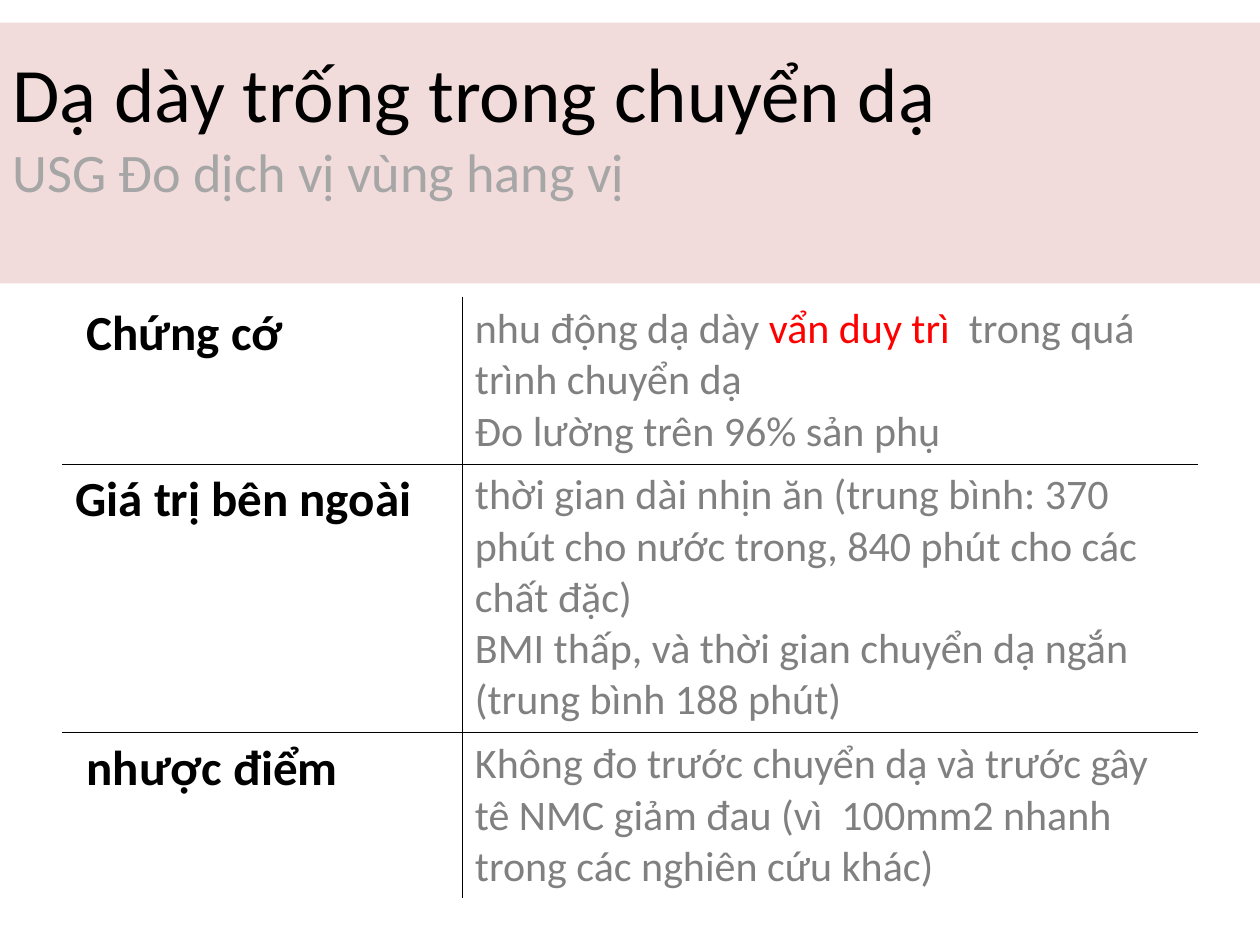
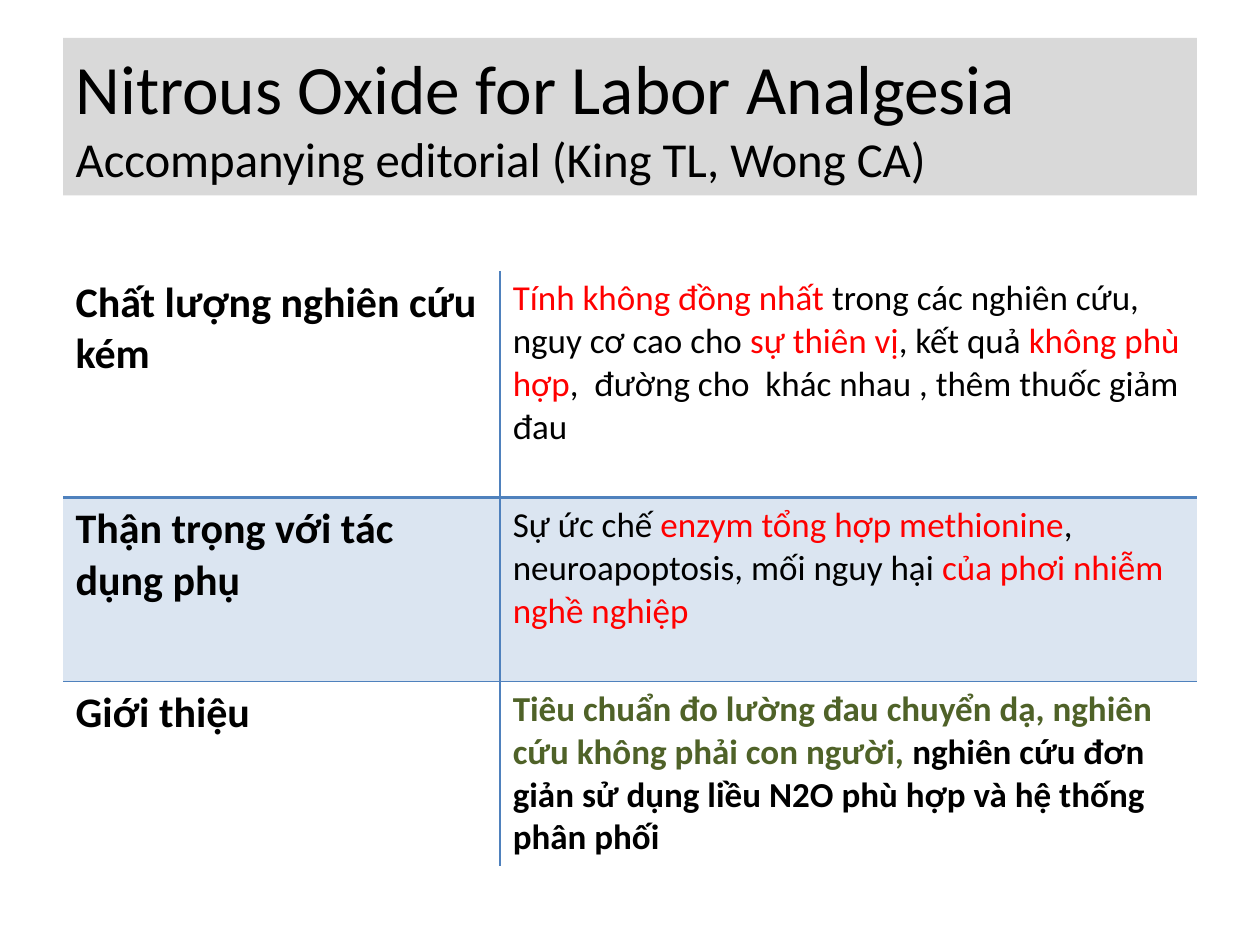
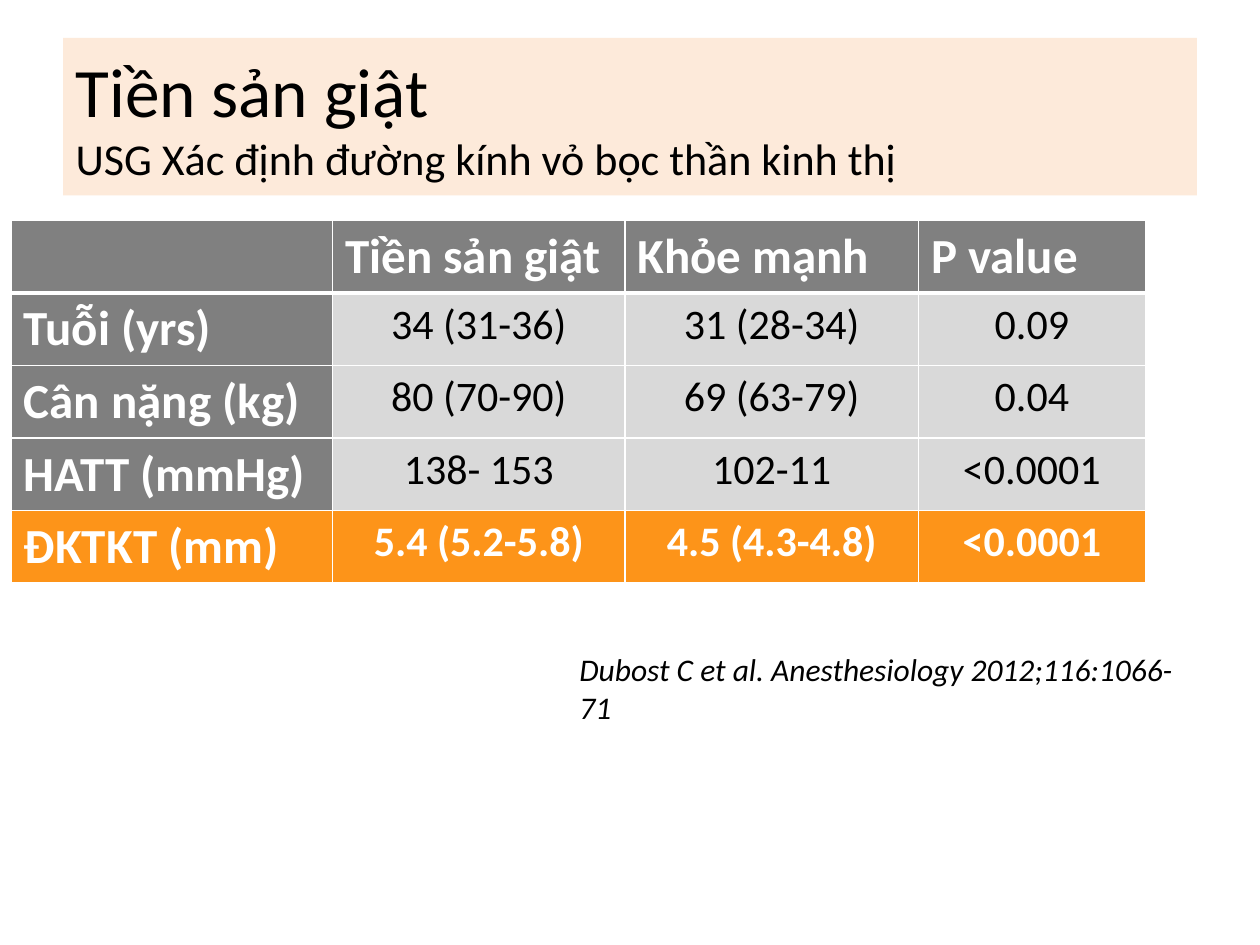
from lxml import etree
from pptx import Presentation
from pptx.dml.color import RGBColor
from pptx.enum.text import MSO_ANCHOR, MSO_AUTO_SIZE, PP_ALIGN
from pptx.oxml.ns import qn
from pptx.util import Inches, Pt

FONT = "Calibri"
COLORS = {
    "black": "000000", "white": "FFFFFF", "red": "FF0000", "green": "4F6228",
    "gray": "808080", "label_gray": "7F7F7F", "light_gray": "D9D9D9",
    "subtitle_gray": "A6A6A6", "rose": "F2DCDB", "peach": "FDEADA",
    "blue": "4F81BD", "orange": "FD9419",
}
TITLE_BOX = (0.5, 0.3, 9, 1.25)


def rgb(name):
    return RGBColor.from_string(COLORS[name])


def add_run(paragraph, text, size, color="black", bold=False, italic=False):
    run = paragraph.add_run()
    run.text = text
    font = run.font
    font.name, font.size, font.bold, font.italic = FONT, Pt(size), bold, italic
    font.color.rgb = rgb(color)


def title_slide(prs, band, heading, subtitle, box=TITLE_BOX, bottom_inset=0.05):
    """Add a slide whose title is a coloured band with two lines.

    heading and subtitle are (text, size, color).
    """
    slide = prs.slides.add_slide(prs.slide_layouts[5])
    title = slide.shapes.title
    title.left, title.top, title.width, title.height = map(Inches, box)
    title.fill.solid()
    title.fill.fore_color.rgb = rgb(band)
    frame = title.text_frame
    frame.auto_size = MSO_AUTO_SIZE.NONE
    frame.vertical_anchor = MSO_ANCHOR.MIDDLE
    frame.margin_bottom = Inches(bottom_inset)
    paragraph = frame.paragraphs[0]
    paragraph.alignment = PP_ALIGN.LEFT
    add_run(paragraph, *heading)
    paragraph.add_line_break()
    add_run(paragraph, *subtitle)
    return slide


def set_border(cell, side, line):
    """Draw one side of a cell; line is (color, points) or None."""
    border = etree.SubElement(cell._tc.get_or_add_tcPr(), qn(f"a:ln{side}"))
    if line is None:
        etree.SubElement(border, qn("a:noFill"))
        return
    color, width = line
    border.set("w", str(Pt(width)))
    fill = etree.SubElement(border, qn("a:solidFill"))
    etree.SubElement(fill, qn("a:srgbClr"), val=COLORS[color])


def fill_cell(cell, color, opacity=100):
    if color is None:
        cell.fill.background()
        return
    cell.fill.solid()
    cell.fill.fore_color.rgb = rgb(color)
    if opacity < 100:
        tint = cell._tc.tcPr.find(f"{qn('a:solidFill')}/{qn('a:srgbClr')}")
        etree.SubElement(tint, qn("a:alpha"), val=str(opacity * 1000))


def add_grid(slide, left, top, columns, heights, across, down):
    """Add a plain table; across and down list its rules from edge to edge."""
    frame = slide.shapes.add_table(
        len(heights), len(columns), Inches(left), Inches(top),
        Inches(sum(columns)), Inches(sum(heights)))
    table = frame.table
    table.first_row = table.horz_banding = False
    for column, width in zip(table.columns, columns):
        column.width = Inches(width)
    for r, height in enumerate(heights):
        table.rows[r].height = Inches(height)
        for c in range(len(columns)):
            sides = (("L", down[c]), ("R", down[c + 1]),
                     ("T", across[r]), ("B", across[r + 1]))
            for side, line in sides:
                set_border(table.cell(r, c), side, line)
    return table


def fill_argument_table(table, rows, label_size, text_size, fills):
    """Bold label on the left, paragraphs of (text, color[, bold]) on the right."""
    for r, (label, paragraphs) in enumerate(rows):
        label_cell, text_cell = table.cell(r, 0), table.cell(r, 1)
        for cell in (label_cell, text_cell):
            fill_cell(cell, *fills[r])
        add_run(label_cell.text_frame.paragraphs[0], label, label_size, bold=True)
        frame = text_cell.text_frame
        for i, runs in enumerate(paragraphs):
            paragraph = frame.add_paragraph() if i else frame.paragraphs[0]
            for text, *style in runs:
                add_run(paragraph, text, text_size, *style)


def fill_value_table(table, rows):
    """Header row, label column, centred values and a highlighted last row."""
    last = len(rows) - 1
    for r, row in enumerate(rows):
        for c, text in enumerate(row):
            cell = table.cell(r, c)
            heading = r == 0 or c == 0
            strong = heading or r == last
            if r == last:
                fill = "orange"
            elif r == 0:
                fill = "gray"
            else:
                fill = "label_gray" if c == 0 else "light_gray"
            fill_cell(cell, fill)
            if text:
                paragraph = cell.text_frame.paragraphs[0]
                paragraph.alignment = PP_ALIGN.LEFT if heading else PP_ALIGN.CENTER
                add_run(paragraph, text, 28 if heading else 24,
                        "white" if strong else "black", strong)


def add_citation(slide, box, text):
    citation = slide.shapes.add_textbox(*map(Inches, box))
    citation.text_frame.word_wrap = True
    add_run(citation.text_frame.paragraphs[0], text, 18, italic=True)


def empty_stomach_slide(prs):
    slide = title_slide(
        prs, "rose", ("Dạ dày trống trong chuyển dạ", 44),
        ("USG Đo dịch vị vùng hang vị", 31, "subtitle_gray"),
        box=(0, 0.18, 10, 2.07), bottom_inset=0.5)
    edge, rule = ("white", 1), ("black", 0.25)
    table = add_grid(slide, 0.5, 2.36, (3.17, 5.83), (1.32, 2.13, 1.32),
                     across=(edge, rule, rule, edge), down=(edge, rule, edge))
    rows = [
        (" Chứng cớ", [
            [("nhu động dạ dày ", "gray"), ("vẩn duy trì  ", "red"),
             ("trong quá trình chuyển dạ", "gray")],
            [("Đo lường trên 96% sản phụ", "gray")]]),
        ("Giá trị bên ngoài", [
            [("thời gian dài nhịn ăn (trung bình: 370 phút cho nước trong, "
              "840 phút cho các chất đặc)", "gray")],
            [("BMI thấp, và thời gian chuyển dạ ngắn (trung bình 188 phút)",
              "gray")]]),
        (" nhược điểm", [
            [("Không đo trước chuyển dạ và trước gây tê NMC giảm đau "
              "(vì  100mm2 nhanh trong các nghiên cứu khác)", "gray")]]),
    ]
    fill_argument_table(table, rows, 28, 24, [("white",)] * 3)


def nitrous_oxide_slide(prs):
    slide = title_slide(
        prs, "light_gray", ("Nitrous Oxide for Labor Analgesia", 39.6),
        ("Accompanying editorial (King TL, Wong CA)", 27.9))
    rule = ("blue", 1)
    table = add_grid(slide, 0.5, 2.15, (3.47, 5.53), (1.8, 1.46, 1.46),
                     across=(None, ("blue", 2), rule, None),
                     down=(None, rule, None))
    rows = [
        ("Chất lượng nghiên cứu kém", [
            [("Tính không đồng nhất ", "red"),
             ("trong các nghiên cứu, nguy cơ cao cho ", "black"),
             ("sự thiên vị", "red"), (", kết quả ", "black"),
             ("không phù hợp", "red"),
             (",  đường cho  khác nhau , thêm thuốc giảm đau", "black")]]),
        ("Thận trọng với tác dụng phụ", [
            [("Sự ức chế ", "black"), ("enzym tổng hợp methionine", "red"),
             (", neuroapoptosis, mối nguy hại ", "black"),
             ("của phơi nhiễm nghề nghiệp", "red")]]),
        ("Giới thiệu", [
            [("Tiêu chuẩn đo lường đau chuyển dạ, nghiên cứu không phải "
              "con người, ", "green", True),
             ("nghiên cứu đơn giản sử dụng liều N2O phù hợp và hệ thống "
              "phân phối", "black", True)]]),
    ]
    fill_argument_table(table, rows, 24, 20, [(None,), ("blue", 20), (None,)])


def preeclampsia_slide(prs):
    slide = title_slide(
        prs, "peach", ("Tiền sản giật", 39.6),
        ("USG Xác định đường kính vỏ bọc thần kinh thị", 25.2))
    rule = ("white", 1)
    rows = [
        ("", "Tiền sản giật", "Khỏe mạnh", "P value"),
        ("Tuỗi (yrs)", "34 (31-36)", "31 (28-34)", "0.09"),
        ("Cân nặng (kg)", "80 (70-90)", "69 (63-79)", "0.04"),
        ("HATT (mmHg)", "138- 153", "102-11", "<0.0001"),
        ("ĐKTKT (mm)", "5.4 (5.2-5.8)", "4.5 (4.3-4.8)", "<0.0001"),
    ]
    table = add_grid(slide, 0.09, 1.75, (2.55, 2.32, 2.33, 1.8),
                     [0.57] * len(rows),
                     across=[rule, ("white", 3)] + [rule] * 4, down=[rule] * 5)
    fill_value_table(table, rows)
    add_citation(slide, (4.5, 5.11, 5, 0.71),
                 "Dubost C et al. Anesthesiology 2012;116:1066-71")


def main():
    prs = Presentation()
    prs.slide_width, prs.slide_height = Inches(10), Inches(7.5)
    empty_stomach_slide(prs)
    nitrous_oxide_slide(prs)
    preeclampsia_slide(prs)
    prs.save("out.pptx")


if __name__ == "__main__":
    main()
